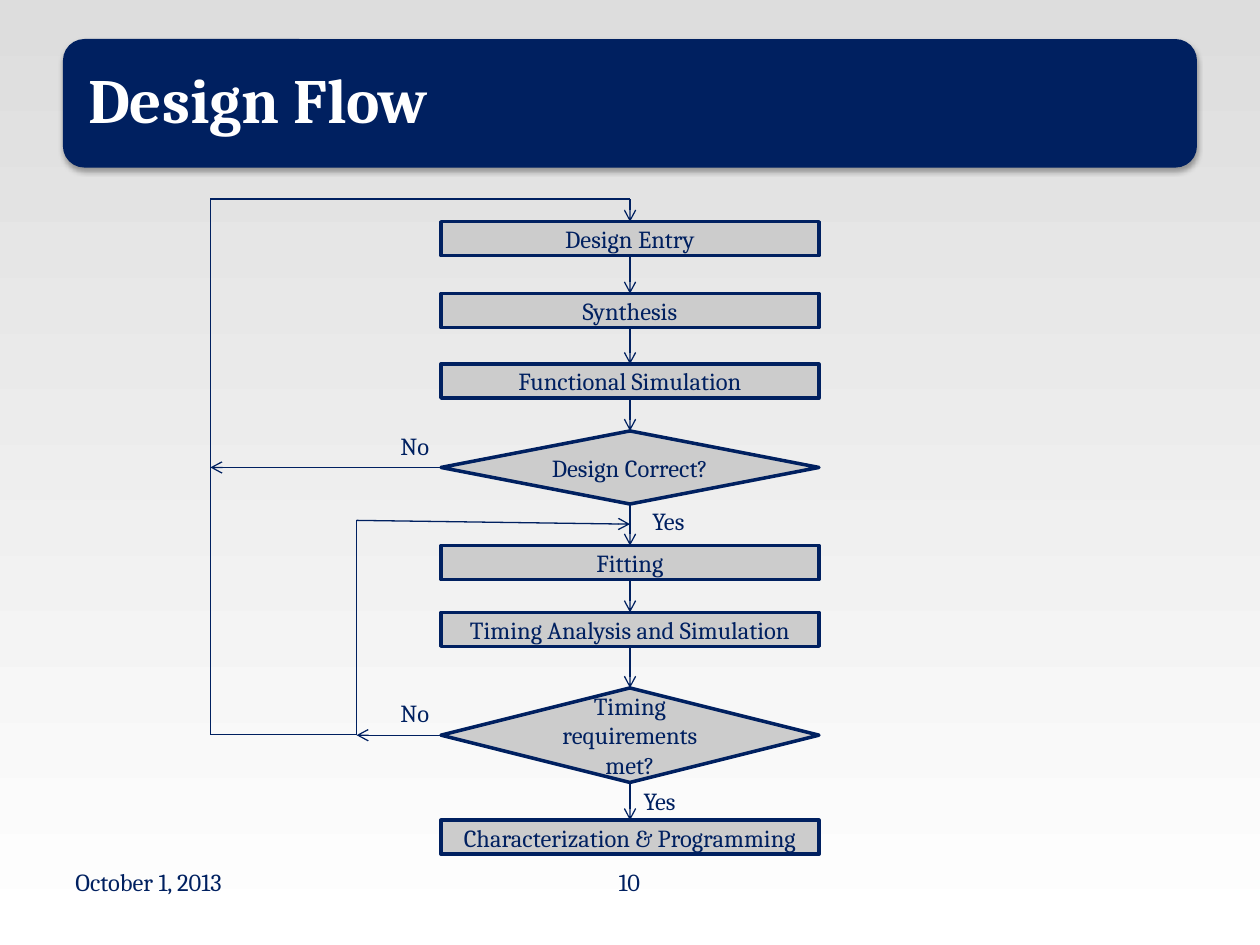
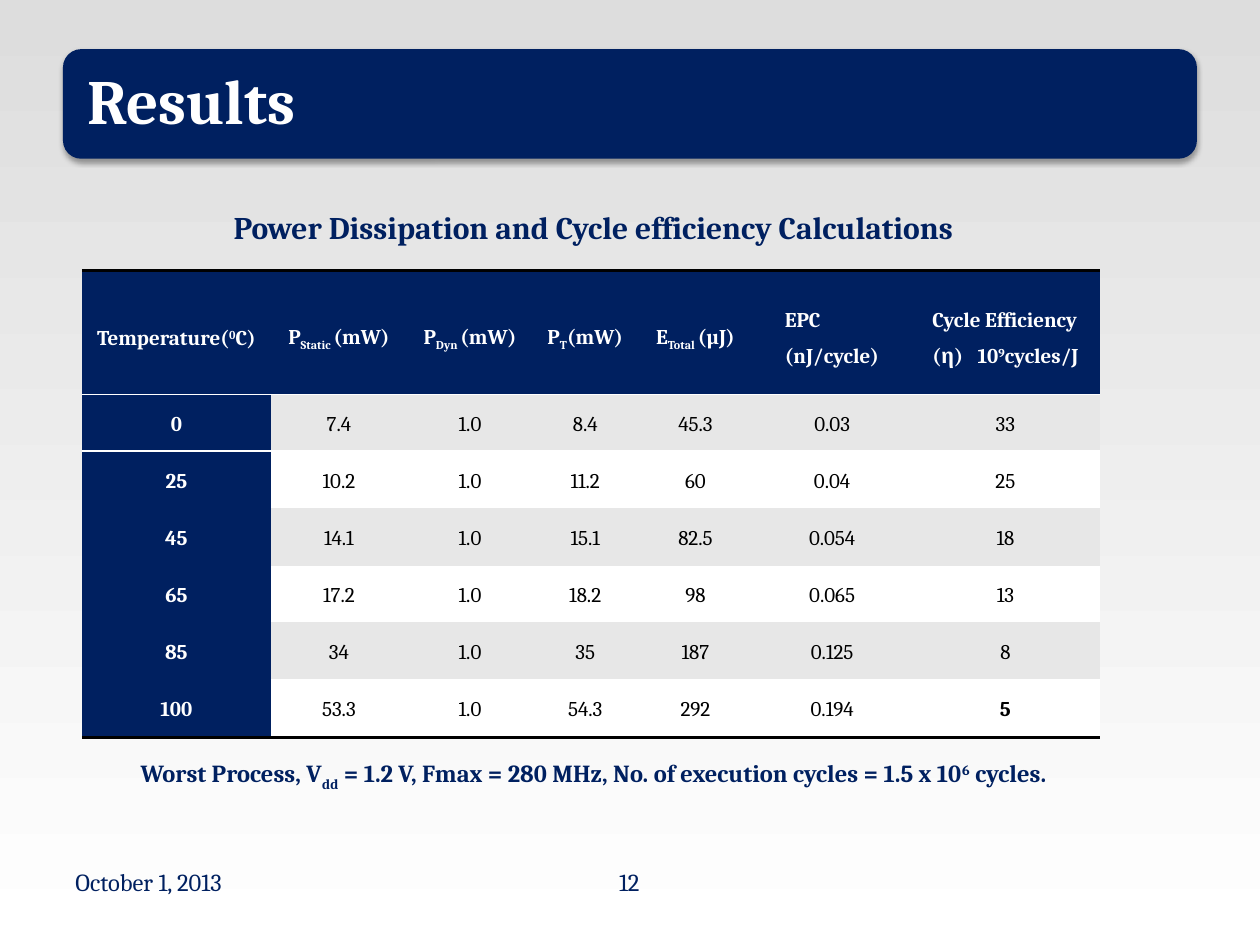
from dataclasses import dataclass
from typing import Optional

from lxml import etree
from pptx import Presentation
from pptx.dml.color import RGBColor
from pptx.enum.shapes import MSO_CONNECTOR as CONNECTOR, MSO_SHAPE as SHAPE
from pptx.enum.text import MSO_ANCHOR as ANCHOR, PP_ALIGN as ALIGN
from pptx.oxml.ns import qn
from pptx.util import Inches, Pt

COLORS = {
    "navy": "002060",
    "box": "CCCCCC",
    "band": "E7E7E7",
    "white": "FFFFFF",
    "black": "000000",
    "bg_top": "DDDDDD",
}
FONT = "Cambria"
SUB, SUPER = -25000, 30000
NO_STYLE = "{2D5ABB26-0587-4C30-8999-92F81FD0307C}"
TOP, LEFT, BOTTOM = 0, 1, 2  # connection sites


@dataclass
class Step:
    text: str
    top: float
    height: float = 0.27
    kind: SHAPE = SHAPE.RECTANGLE


@dataclass
class Label:
    text: str
    left: float
    top: float
    width: float
    height: float = 0.34
    size: int = 14
    bold: bool = False
    align: Optional[ALIGN] = None


@dataclass
class Part:
    text: str
    baseline: int = 0


@dataclass
class Line:
    start: tuple[float, float]
    end: tuple[float, float]
    arrow: bool = False


def rgb(name: str) -> RGBColor:
    return RGBColor.from_string(COLORS[name])


# Shared text and line helpers
def format_runs(paragraph, size: int, color: str, bold: bool = False) -> None:
    for run in paragraph.runs:
        run.font.name = FONT
        run.font.size = Pt(size)
        run.font.bold = bold
        run.font.color.rgb = rgb(color)


def add_parts(paragraph, parts: list[Part]) -> None:
    for part in parts:
        run = paragraph.add_run()
        run.text = part.text
        if part.baseline:
            run.font._element.set("baseline", str(part.baseline))


def add_label(slide, label: Label, parts: Optional[list[Part]] = None) -> None:
    box = slide.shapes.add_textbox(Inches(label.left), Inches(label.top),
                                   Inches(label.width), Inches(label.height))
    box.text_frame.word_wrap = True
    paragraph = box.text_frame.paragraphs[0]
    add_parts(paragraph, parts or [Part(label.text)])
    paragraph.alignment = label.align
    format_runs(paragraph, label.size, "navy", label.bold)


def add_line(slide, line: Line):
    connector = slide.shapes.add_connector(
        CONNECTOR.STRAIGHT, *(Inches(v) for v in line.start + line.end))
    connector.line.color.rgb = rgb("navy")
    connector.line.width = Pt(0.75)
    if line.arrow:
        etree.SubElement(connector.line._get_or_add_ln(), qn("a:tailEnd"), type="arrow")
    etree.SubElement(connector._element.spPr, qn("a:effectLst"))
    return connector


# Background, title band and footer
def add_band_shadow(band) -> None:
    band.shadow.inherit = False
    effects = band._element.spPr.find(qn("a:effectLst"))
    shadow = etree.SubElement(effects, qn("a:outerShdw"), blurRad=str(Pt(3.1)),
                              dist=str(Pt(1.8)), dir="5400000", rotWithShape="0")
    color = etree.SubElement(shadow, qn("a:srgbClr"), val=COLORS["black"])
    etree.SubElement(color, qn("a:alpha"), val="35000")


def add_base_slide(prs, title: str, number: int, top: float, height: float):
    slide = prs.slides.add_slide(prs.slide_layouts[6])
    fill = slide.background.fill
    fill.gradient()
    fill.gradient_angle = 270
    for stop, position, name in zip(fill.gradient_stops, (0, 1), ("bg_top", "white")):
        stop.position = position
        stop.color.rgb = rgb(name)

    band = slide.shapes.add_shape(SHAPE.ROUNDED_RECTANGLE, Inches(0.5), Inches(top),
                                  Inches(9), Inches(height))
    band.fill.solid()
    band.fill.fore_color.rgb = rgb("navy")
    band.line.fill.background()
    add_band_shadow(band)
    frame = band.text_frame
    frame.margin_left = frame.margin_right = Inches(0.15)
    frame.margin_top = frame.margin_bottom = Inches(0.15)
    frame.vertical_anchor = ANCHOR.MIDDLE
    frame.text = title
    heading = frame.paragraphs[0]
    heading.alignment = ALIGN.LEFT
    heading.line_spacing = 0.9
    format_runs(heading, 36, "white", True)

    add_label(slide, Label("October 1, 2013", 0.5, 6.83, 2.33, 0.52))
    add_label(slide, Label(str(number), 3.83, 6.83, 2.33, 0.52, align=ALIGN.CENTER))
    return slide


# Design flow chart
STEPS = [
    Step("Design Entry", 1.76),
    Step("Synthesis", 2.33),
    Step("Functional Simulation", 2.89),
    Step("Design Correct?", 3.42, 0.58, SHAPE.FLOWCHART_DECISION),
    Step("Fitting", 4.33),
    Step("Timing Analysis and Simulation", 4.86),
    Step("Timing requirements met?", 5.46, 0.75, SHAPE.FLOWCHART_DECISION),
    Step("Characterization & Programming", 6.51),
]
ANSWERS = [
    Label("No", 3.08, 3.37, 0.5),
    Label("Yes", 5.08, 3.97, 0.58),
    Label("No", 3.08, 5.49, 0.5),
    Label("Yes", 5.01, 6.19, 0.51),
]
CENTER, BOX_LEFT = 5, 3.5
OUTER, INNER = 1.67, 2.83  # left edges of the two feedback loops
LOOP_TOP, LOOP_BOTTOM = 1.58, 5.83


def add_step(slide, step: Step):
    box = slide.shapes.add_shape(step.kind, Inches(BOX_LEFT), Inches(step.top),
                                 Inches(3), Inches(step.height))
    box.shadow.inherit = False
    box.fill.solid()
    box.fill.fore_color.rgb = rgb("box")
    box.line.color.rgb = rgb("navy")
    box.line.width = Pt(2)
    box.text_frame.vertical_anchor = ANCHOR.MIDDLE
    box.text_frame.text = step.text
    paragraph = box.text_frame.paragraphs[0]
    paragraph.alignment = ALIGN.CENTER
    format_runs(paragraph, 14, "navy")
    return box


def build_design_flow(prs) -> None:
    slide = add_base_slide(prs, "Design Flow", 10, 0.31, 1.02)
    boxes = [add_step(slide, step) for step in STEPS]

    for (step, box), (following, next_box) in zip(zip(STEPS, boxes),
                                                  zip(STEPS[1:], boxes[1:])):
        arrow = add_line(slide, Line((CENTER, step.top + step.height),
                                     (CENTER, following.top), True))
        arrow.begin_connect(box, BOTTOM)
        arrow.end_connect(next_box, TOP)

    # Feedback loops
    for line in (
        Line((INNER, LOOP_BOTTOM), (OUTER, LOOP_BOTTOM)),
        Line((OUTER, LOOP_BOTTOM), (OUTER, LOOP_TOP)),
        Line((OUTER, LOOP_TOP), (CENTER, LOOP_TOP)),
        Line((INNER, LOOP_BOTTOM), (INNER, 4.13)),
        Line((INNER, 4.13), (CENTER, 4.16), True),
    ):
        add_line(slide, line)
    entry = add_line(slide, Line((CENTER, LOOP_TOP), (CENTER, STEPS[0].top), True))
    entry.end_connect(boxes[0], TOP)
    for index, loop_left in ((3, OUTER), (6, INNER)):
        middle = STEPS[index].top + STEPS[index].height / 2
        rejection = add_line(slide, Line((BOX_LEFT, middle), (loop_left, middle), True))
        rejection.begin_connect(boxes[index], LEFT)

    for answer in ANSWERS:
        add_label(slide, answer)


# Results table
HEADERS = [
    [Part("Temperature("), Part("0", SUPER), Part("C)")],
    [Part("P"), Part("Static ", SUB), Part("(mW)")],
    [Part("P"), Part("Dyn ", SUB), Part("(mW)")],
    [Part("P"), Part("T", SUB), Part("(mW)")],
    [Part("E"), Part("Total ", SUB), Part("(µJ)")],
    [Part("EPC (nJ/cycle)")],
    [Part("Cycle Efficiency (η)\t10"), Part("9", SUPER), Part("cycles/J")],
]
LEFT_HEADERS = {5: 0.25, 6: 0.17}  # left-aligned headers and their indents
RESULTS = [
    ["0", "7.4", "1.0", "8.4", "45.3", "0.03", "33"],
    ["25", "10.2", "1.0", "11.2", "60", "0.04", "25"],
    ["45", "14.1", "1.0", "15.1", "82.5", "0.054", "18"],
    ["65", "17.2", "1.0", "18.2", "98", "0.065", "13"],
    ["85", "34", "1.0", "35", "187", "0.125", "8"],
    ["100", "53.3", "1.0", "54.3", "292", "0.194", "5"],
]
COLUMN_WIDTHS = [1.5, 1.08, 1, 0.83, 0.92, 1.25, 1.5]
ROW_HEIGHTS = [0.98, 0.45, 0.45, 0.46, 0.45, 0.45, 0.46]


def add_border(cell, side: str, color: str, width: float) -> None:
    border = etree.SubElement(cell._tc.get_or_add_tcPr(), qn(f"a:ln{side}"),
                              w=str(Pt(width)))
    fill = etree.SubElement(border, qn("a:solidFill"))
    etree.SubElement(fill, qn("a:srgbClr"), val=COLORS[color])


def style_cell(cell, fill: str) -> None:
    cell.fill.solid()
    cell.fill.fore_color.rgb = rgb(fill)
    cell.vertical_anchor = ANCHOR.MIDDLE
    cell.margin_left = cell.margin_right = Inches(0.07)
    cell.margin_top = cell.margin_bottom = 0


def fill_header(cell, column: int) -> None:
    add_border(cell, "T", "black", 2)
    add_border(cell, "B", "white", 1)
    style_cell(cell, "navy")
    paragraph = cell.text_frame.paragraphs[0]
    paragraph.alignment = ALIGN.CENTER
    paragraph.line_spacing = 1.5
    paragraph.space_after = Pt(10)
    if column in LEFT_HEADERS:
        paragraph.alignment = ALIGN.LEFT
        cell.margin_left = Inches(LEFT_HEADERS[column])
        tabs = etree.SubElement(paragraph._p.get_or_add_pPr(), qn("a:tabLst"))
        etree.SubElement(tabs, qn("a:tab"), pos=str(Inches(0.36)), algn="l")
    add_parts(paragraph, HEADERS[column])
    format_runs(paragraph, 12, "white", True)


def fill_result(cell, row: int, column: int) -> None:
    is_temperature, is_last = column == 0, row == len(RESULTS)
    if row == 1:
        add_border(cell, "T", "white", 1)
        if is_temperature:
            add_border(cell, "B", "white", 1)
    if is_last:
        add_border(cell, "B", "black", 2)
    style_cell(cell, "navy" if is_temperature else "band" if row % 2 else "white")
    cell.text_frame.text = RESULTS[row - 1][column]
    paragraph = cell.text_frame.paragraphs[0]
    paragraph.alignment = ALIGN.CENTER
    paragraph.line_spacing = 1.15
    is_worst_efficiency = is_last and column == len(HEADERS) - 1
    format_runs(paragraph, 12, "white" if is_temperature else "black",
                is_temperature or is_worst_efficiency)


def build_results(prs) -> None:
    slide = add_base_slide(prs, "Results", 12, 0.39, 0.87)
    add_label(slide, Label("Power Dissipation and Cycle efficiency Calculations",
                           0.67, 1.6, 8.08, 0.4, 18, True, ALIGN.CENTER))

    table = slide.shapes.add_table(len(ROW_HEIGHTS), len(COLUMN_WIDTHS), Inches(0.65),
                                   Inches(2.15), Inches(8.08), Inches(3.69)).table
    table._tbl.tblPr.find(qn("a:tableStyleId")).text = NO_STYLE
    for column, width in zip(table.columns, COLUMN_WIDTHS):
        column.width = Inches(width)
    for row, height in enumerate(ROW_HEIGHTS):
        table.rows[row].height = Inches(height)
        for column in range(len(COLUMN_WIDTHS)):
            cell = table.cell(row, column)
            if row == 0:
                fill_header(cell, column)
            else:
                fill_result(cell, row, column)

    conditions = [Part("Worst Process, V"), Part("dd", SUB),
                  Part(" = 1.2 V, Fmax = 280 MHz, No. of execution cycles = 1.5 x 10"),
                  Part("6", SUPER), Part(" cycles.")]
    add_label(slide, Label("", 0.75, 5.97, 7.92, bold=True, align=ALIGN.CENTER), conditions)


def main() -> None:
    prs = Presentation()
    prs.slide_width, prs.slide_height = Inches(10), Inches(7.5)
    build_design_flow(prs)
    build_results(prs)
    prs.save("out.pptx")


if __name__ == "__main__":
    main()
